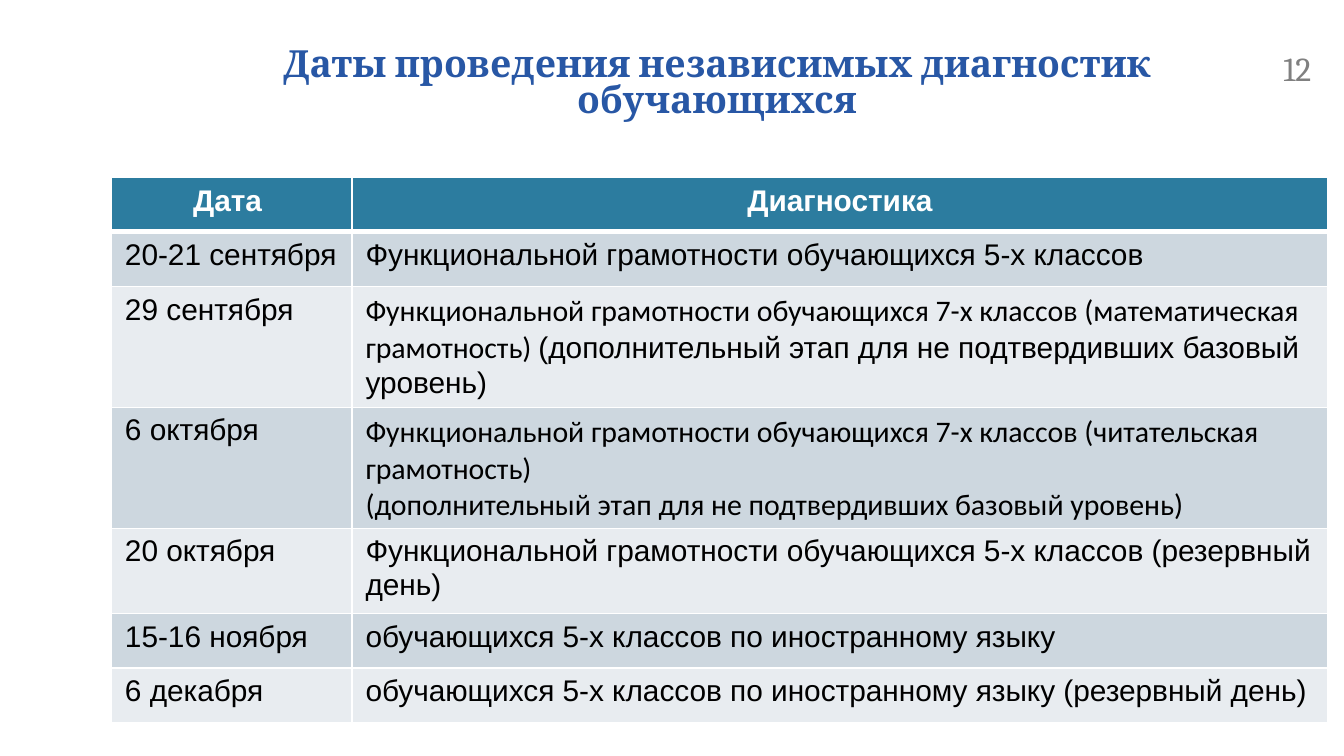
from dataclasses import dataclass

from lxml import etree
from pptx import Presentation
from pptx import util as u
from pptx.dml.color import RGBColor
from pptx.enum import text
from pptx.oxml.ns import qn

WIDE = 10
HIGH = WIDE * 9 / 16
ROW = u.Pt(29.2)
COLS = (1.79, 7.26)
HUES = {
    "title": "2857A5", "page": "808080", "head": "2C7C9F", "dark": "CDD7DF",
    "light": "E8ECF0", "white": "FFFFFF", "black": "000000",
}
TITLE = {"name": "Cambria", "size": u.Pt(20), "bold": True}
PAGE = {"name": "Cambria", "size": u.Pt(18)}
HEAD = {"name": "Arial", "size": u.Pt(16), "bold": True}
BODY = {"name": "Arial", "size": u.Pt(16), "bold": False}
SANS = {**BODY, "name": "Calibri"}


@dataclass
class Run:
    words: str
    form: dict


@dataclass
class Test:
    date: str
    paras: list[list[Run]]


def plain(words: str, form: dict = BODY) -> list[list[Run]]:
    return [[Run(words, form)]]


EXTRA = "(дополнительный этап для не подтвердивших базовый уровень)"
GROUP = "Функциональной грамотности обучающихся"
SPEECH = "обучающихся 5-х классов по иностранному языку"
TESTS = [
    Test("20-21 сентября", plain(f"{GROUP} 5-х классов")),
    Test("29 сентября", [[
        Run(f"{GROUP} 7-х классов (математическая грамотность) ", SANS),
        Run(EXTRA, BODY)]]),
    Test("6 октября", [
        [Run(f"{GROUP} 7-х классов (читательская грамотность)", SANS)],
        [Run(EXTRA, SANS)]]),
    Test("20 октября", plain(f"{GROUP} 5-х классов (резервный день)")),
    Test("15-16 ноября", plain(SPEECH)),
    Test("6 декабря", plain(f"{SPEECH} (резервный день)")),
]


def write(frame, paras: list[list[Run]], hue: str, mid: bool = False) -> None:
    for i, runs in enumerate(paras):
        para = frame.add_paragraph() if i else frame.paragraphs[0]
        para.alignment = text.PP_ALIGN.CENTER if mid else text.PP_ALIGN.LEFT
        for item in runs:
            run = para.add_run()
            run.text = item.words
            for key, value in item.form.items():
                setattr(run.font, key, value)
            run.font.color.rgb = RGBColor.from_string(HUES[hue])


def label(slide, area: tuple, item: Run, hue: str, mid: bool = False):
    """Add a text box; area holds percentages of the slide's size."""
    left, top, width, height = (share / 100 for share in area)
    box = slide.shapes.add_textbox(
        u.Inches(left * WIDE), u.Inches(top * HIGH),
        u.Inches(width * WIDE), u.Inches(height * HIGH))
    box.text_frame.word_wrap = True
    write(box.text_frame, [[item]], hue, mid)
    return box.text_frame


def edge(cell, sides: dict[str, float]) -> None:
    """Draw white borders, widths in points by side."""
    props = cell._tc.get_or_add_tcPr()
    for side, width in sides.items():
        line = etree.SubElement(props, qn(f"a:ln{side}"), w=str(u.Pt(width)))
        fill = etree.SubElement(line, qn("a:solidFill"))
        etree.SubElement(fill, qn("a:srgbClr"), val=HUES["white"])


def grid(slide) -> None:
    rows = [[plain("Дата ", HEAD), plain("Диагностика", HEAD)]]
    rows += [[plain(test.date), test.paras] for test in TESTS]
    frame = slide.shapes.add_table(
        len(rows), len(COLS), u.Inches(0.83), u.Inches(1.32),
        u.Inches(sum(COLS)), u.Inches(3.83))
    table = frame.table
    for col, width in zip(table.columns, COLS):
        col.width = u.Inches(width)
    for r, row in enumerate(rows):
        table.rows[r].height = ROW
        head = r == 0
        tint = "head" if head else "dark" if r % 2 else "light"
        for c, paras in enumerate(row):
            cell = table.cell(r, c)
            edge(cell, {"L": 1, "R": 1, "T": 3 if r == 1 else 1, "B": 3 if head else 1})
            cell.fill.solid()
            cell.fill.fore_color.rgb = RGBColor.from_string(HUES[tint])
            write(cell.text_frame, paras, "white" if head else "black", head)
    frame.height = u.Inches(3.83)


def main() -> None:
    deck = Presentation()
    deck.slide_width, deck.slide_height = u.Inches(WIDE), u.Inches(HIGH)
    slide = deck.slides.add_slide(deck.slide_layouts[6])
    title = label(slide, (12.2, 5.6, 82.3, 8), Run(
        "Даты проведения независимых диагностик обучающихся", TITLE), "title", True)
    title.paragraphs[0].line_spacing = 0.8
    grid(slide)
    label(slide, (94.5, 5.5, 5.5, 5.33), Run("12", PAGE), "page")
    deck.save("out.pptx")


if __name__ == "__main__":
    main()
